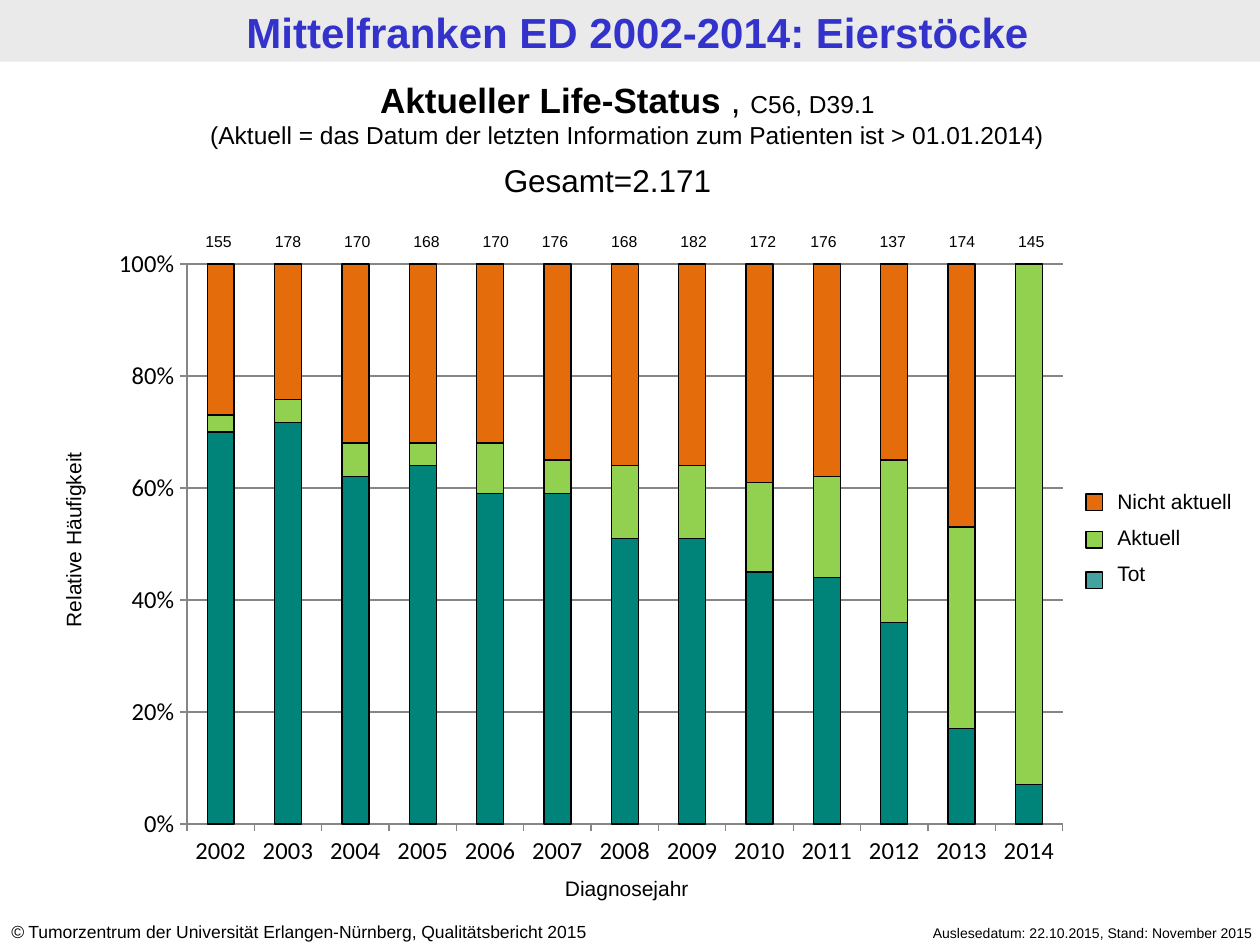
from itertools import chain

from lxml import etree
from pptx import Presentation
from pptx import util as u
from pptx.chart.data import CategoryChartData
from pptx.dml.color import RGBColor
from pptx.enum import chart as charts, shapes, text
from pptx.oxml import parse_xml
from pptx.oxml.ns import nsdecls, qn

BLACK = RGBColor(0x00, 0x00, 0x00)
BAND = RGBColor(0xEA, 0xEA, 0xEA)
TITLE_BLUE = RGBColor(0x33, 0x33, 0xCC)
GRID = RGBColor(0x86, 0x86, 0x86)
TEAL = RGBColor(0x00, 0x83, 0x78)
LEGEND_TEAL = RGBColor(0x00, 0x83, 0x80)
GREEN = RGBColor(0x92, 0xD0, 0x50)
ORANGE = RGBColor(0xE4, 0x6C, 0x0A)

LEFT, CENTER, RIGHT = text.PP_ALIGN.LEFT, text.PP_ALIGN.CENTER, text.PP_ALIGN.RIGHT


class SlideBuilder:
    """Holds the style and the current slide."""

    font_name = "Arial"
    chart_font = "Calibri"
    line_width = u.Pt(0.75)

    def __init__(self, slide):
        self.slide = slide

    def style(self, font, size, bold=False, italic=False, color=BLACK):
        font.name, font.size = self.font_name, u.Pt(size)
        font.bold, font.italic = bold, italic
        font.color.rgb = color

    def title(self, box, wording, size):
        shape = self.slide.shapes.title
        shape.left, shape.top, shape.width, shape.height = map(u.Inches, box)
        frame = shape.text_frame
        frame.text = wording
        frame.margin_left = frame.margin_right = u.Inches(0.09)
        frame.margin_top = frame.margin_bottom = u.Inches(0.04)
        frame.vertical_anchor = text.MSO_ANCHOR.MIDDLE
        paragraph = frame.paragraphs[0]
        paragraph.alignment = CENTER
        self.style(paragraph.runs[0].font, size, bold=True, color=TITLE_BLUE)

    def text(self, box, paragraphs, align=LEFT, gap=0, rotation=0):
        """Each paragraph is a list of (wording, size, style options) runs."""
        shape = self.slide.shapes.add_textbox(*map(u.Inches, box))
        shape.rotation = rotation
        frame = shape.text_frame
        frame.word_wrap = True
        for index, runs in enumerate(paragraphs):
            paragraph = frame.add_paragraph() if index else frame.paragraphs[0]
            paragraph.alignment = align
            if index and gap:
                paragraph.space_before = u.Pt(gap)
            for wording, size, options in runs:
                run = paragraph.add_run()
                run.text = wording
                self.style(run.font, size, **options)

    def label(self, box, wording, size, align=LEFT, rotation=0):
        self.text(box, [[(wording, size, {})]], align, rotation=rotation)

    def rectangle(self, box, color, outlined=True, opacity=100):
        shape = self.slide.shapes.add_shape(
            shapes.MSO_SHAPE.RECTANGLE, *map(u.Inches, box))
        shape.shadow.inherit = False
        shape.fill.solid()
        shape.fill.fore_color.rgb = color
        if opacity < 100:
            rgb = shape.fill._xPr.find(qn("a:solidFill"))[0]
            etree.SubElement(rgb, qn("a:alpha")).set("val", str(opacity * 1000))
        if outlined:
            self.outline(shape.line, BLACK)
        else:
            shape.line.fill.background()

    def outline(self, line, color):
        line.color.rgb = color
        line.width = self.line_width

    def chart(self, box, categories, series, plot_layout):
        data = CategoryChartData(number_format="0")
        data.categories = categories
        for name, _, values in series:
            data.add_series(name, values)
        chart = self.slide.shapes.add_chart(
            charts.XL_CHART_TYPE.COLUMN_STACKED_100, *map(u.Inches, box), data).chart
        chart.has_legend = chart.has_title = False
        chart.font.name, chart.font.size = self.chart_font, u.Pt(14)
        chart.font.color.rgb = BLACK

        plot = chart.plots[0]
        plot.gap_width, plot.overlap = 150, 100
        plot.vary_by_categories = False
        for bars, (_, color, _) in zip(plot.series, series):
            bars.format.fill.solid()
            bars.format.fill.fore_color.rgb = color
            self.outline(bars.format.line, BLACK)

        value_axis = chart.value_axis
        value_axis.minimum_scale, value_axis.maximum_scale = 0, 1
        value_axis.major_unit = 0.2
        value_axis.has_major_gridlines = True
        self.outline(value_axis.major_gridlines.format.line, GRID)
        value_axis.tick_labels.number_format = "0%"
        value_axis.tick_labels.number_format_is_linked = False
        for axis in (value_axis, chart.category_axis):
            axis.major_tick_mark = charts.XL_TICK_MARK.OUTSIDE
            axis.tick_labels.font.size = u.Pt(14)
            self.outline(axis.format.line, GRID)
        self.place_plot(chart, plot_layout)

    def place_plot(self, chart, fractions):
        """Fix the inner plot area, as fractions of the chart."""
        sizes = "".join(f'<c:{key} val="{value}"/>' for key, value in zip("xywh", fractions))
        layout = parse_xml(
            f'<c:layout {nsdecls("c")}><c:manualLayout><c:layoutTarget val="inner"/>'
            f'<c:xMode val="edge"/><c:yMode val="edge"/>{sizes}'
            "</c:manualLayout></c:layout>")
        plot_area = chart._chartSpace.chart.plotArea
        for old in plot_area.findall(qn("c:layout")):
            plot_area.remove(old)
        plot_area.insert(0, layout)


def main():
    presentation = Presentation()
    presentation.slide_width, presentation.slide_height = u.Inches(10), u.Inches(7.5)
    title_only = presentation.slide_layouts[5]
    builder = SlideBuilder(presentation.slides.add_slide(title_only))

    # Title band; the title is moved in front of it
    builder.rectangle((0, 0, 10, 0.49), BAND, outlined=False)
    builder.title((0.06, 0.01, 10, 0.49), "Mittelfranken ED 2002-2014: Eierstöcke", 24)
    tree = builder.slide.shapes._spTree
    tree.append(builder.slide.shapes.title._element)

    # Footer
    builder.label((6.65, 7.29, 3.39, 0.24),
                  "Auslesedatum: 22.10.2015, Stand: November 2015", 8, RIGHT)
    builder.text((-0.01, 7.26, 5.24, 0.27), [[
        ("©", 10, {"italic": True}),
        (" Tumorzentrum der Universität Erlangen-Nürnberg, Qualitätsbericht 2015", 10, {}),
    ]])

    # Chart of the life status by year of diagnosis
    series = [
        ("Tot", TEAL, (70, 71, 62, 64, 59, 59, 51, 51, 45, 44, 36, 17, 7)),
        ("Aktuell", GREEN, (3, 4, 6, 4, 9, 6, 13, 13, 16, 18, 29, 36, 93)),
        ("Nicht aktuell", ORANGE, (27, 24, 32, 32, 32, 35, 36, 36, 39, 38, 35, 47, 0)),
    ]
    years = [str(year) for year in range(2002, 2015)]
    builder.chart((0.79, 1.87, 7.8, 5.11), years, series, (0.089, 0.044, 0.891, 0.87))

    # Axis titles
    builder.label((-0.62, 4.13, 2.41, 0.31), "Relative Häufigkeit", 12, CENTER, rotation=270)
    builder.label((3.85, 6.9, 2.25, 0.31), "Diagnosejahr", 12, CENTER)

    # Case counts above the columns, in three evenly spaced groups
    pitch = 0.55
    groups = [(1.46, (155, 178, 170, 168, 170)),
              (4.13, (176, 168, 182, 172)),
              (6.26, (176, 137, 174, 145))]
    counts = chain.from_iterable(
        ((start + index * pitch, count) for index, count in enumerate(group))
        for start, group in groups)
    for left, count in counts:
        builder.label((left, 1.79, pitch, 0.25), str(count), 9, CENTER)

    # Legend
    builder.text((8.77, 3.83, 1.23, 0.91),
                 [[(name, 12, {})] for name, _, _ in reversed(series)], gap=6)
    for top, color, opacity in ((3.92, ORANGE, 100), (4.22, GREEN, 100),
                                (4.54, LEGEND_TEAL, 74)):
        builder.rectangle((8.62, top, 0.13, 0.13), color, opacity=opacity)

    # Chart heading and total
    builder.text((-0.04, 0.57, 10.04, 0.67), [
        [("Aktueller Life-Status ", 20, {"bold": True}), (", ", 20, {}), ("C56, D39.1", 14, {})],
        [("(Aktuell = das Datum der letzten Information zum Patienten ist > 01.01.2014)", 14, {})],
    ], CENTER)
    builder.label((3.9, 1.23, 2.2, 0.4), "Gesamt=2.171", 18)

    presentation.save("out.pptx")


if __name__ == "__main__":
    main()
